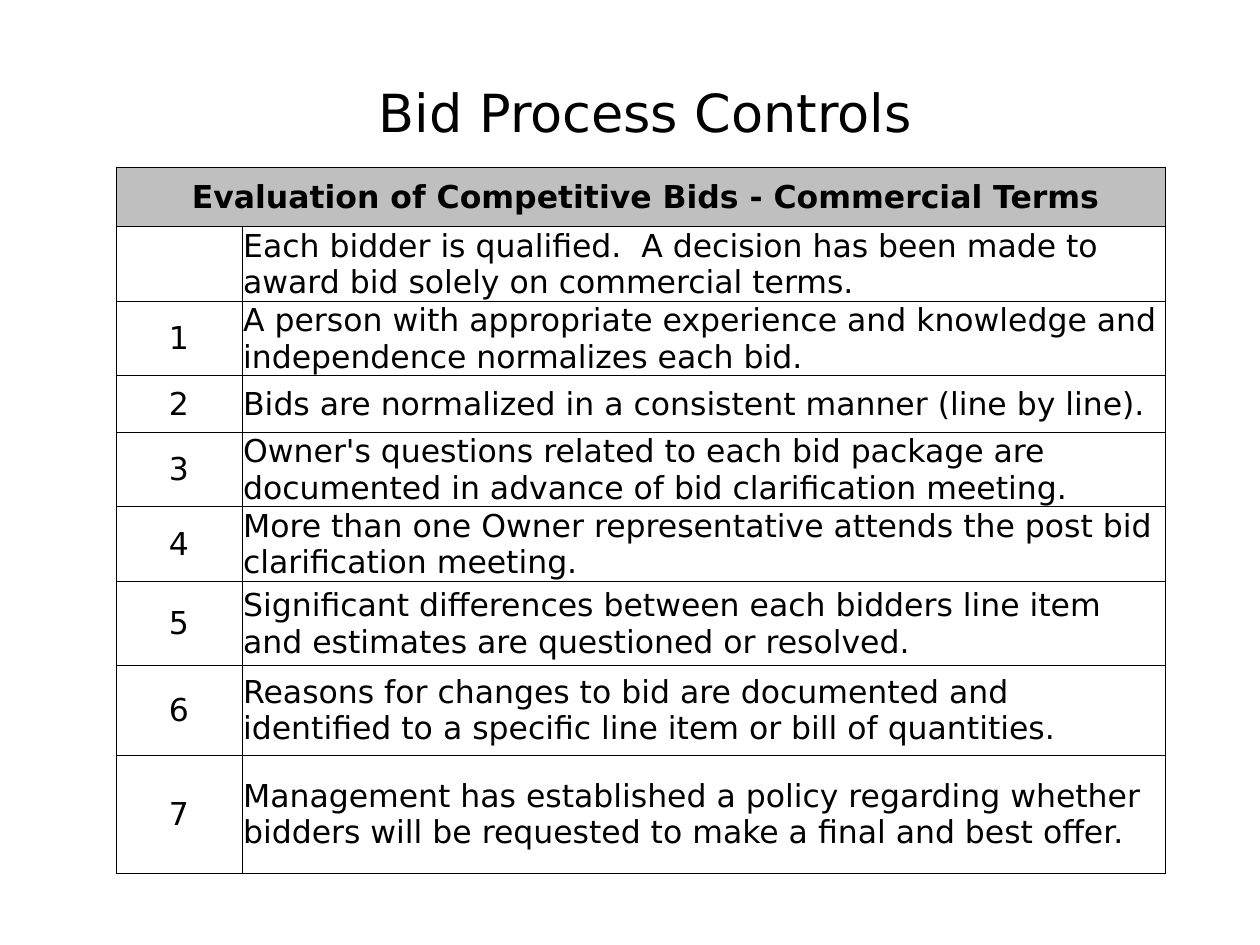
from dataclasses import dataclass

from lxml.etree import SubElement
from pptx import Presentation
from pptx.dml.color import RGBColor
from pptx.enum.text import MSO_ANCHOR, PP_ALIGN
from pptx.oxml.ns import qn
from pptx.util import Inches, Pt


@dataclass(frozen=True)
class Theme:
    font: str = "DejaVu Sans"
    title_size: int = 30
    table_size: int = 18
    border_width: float = 0.5
    ink: str = "000000"
    header_fill: str = "BFBFBF"


theme = Theme()

HEADING = "Evaluation of Competitive Bids - Commercial Terms"
# Number, control and row height in inches
CONTROLS = [
    ("", "Each bidder is qualified.  A decision has been made to award bid solely on commercial terms.", 0.58),
    ("1", "A person with appropriate experience and knowledge and independence normalizes each bid.", 0.58),
    ("2", "Bids are normalized in a consistent manner (line by line).", 0.45),
    ("3", "Owner's questions related to each bid package are documented in advance of bid clarification meeting.", 0.58),
    ("4", "More than one Owner representative attends the post bid clarification meeting.", 0.58),
    ("5", "Significant differences between each bidders line item and estimates are questioned or resolved.", 0.67),
    ("6", "Reasons for changes to bid are documented and identified to a specific line item or bill of quantities.", 0.71),
    ("7", "Management has established a policy regarding whether bidders will be requested to make a final and best offer.", 0.94),
]
HEADING_HEIGHT = 0.47
COLUMN_WIDTHS = [1, 7.33]


def style_paragraph(paragraph, size, align, bold=False):
    paragraph.alignment = align
    paragraph.font.name = theme.font
    paragraph.font.size = Pt(size)
    paragraph.font.bold = bold
    paragraph.font.color.rgb = RGBColor.from_string(theme.ink)


def add_borders(cell):
    properties = cell._tc.get_or_add_tcPr()
    for side in ("a:lnL", "a:lnR", "a:lnT", "a:lnB"):
        line = SubElement(properties, qn(side), w=str(Pt(theme.border_width)))
        fill = SubElement(line, qn("a:solidFill"))
        SubElement(fill, qn("a:srgbClr"), val=theme.ink)


prs = Presentation()
prs.slide_width, prs.slide_height = Inches(10), Inches(7.5)
slide = prs.slides.add_slide(prs.slide_layouts[5])

title = slide.shapes.title
title.left, title.top = Inches(1), Inches(0.5)
title.width, title.height = Inches(8.25), Inches(0.83)
title.text_frame.text = "Bid Process Controls"
title.text_frame.vertical_anchor = MSO_ANCHOR.MIDDLE
title_line = title.text_frame.paragraphs[0]
title_line.line_spacing = 0.9
style_paragraph(title_line, theme.title_size, PP_ALIGN.CENTER)

heights = [HEADING_HEIGHT] + [height for _, _, height in CONTROLS]
controls = slide.shapes.add_table(
    len(heights), len(COLUMN_WIDTHS), Inches(0.92), Inches(1.33),
    Inches(sum(COLUMN_WIDTHS)), Inches(sum(heights)),
).table
controls.first_row = controls.horz_banding = False
for column, width in zip(controls.columns, COLUMN_WIDTHS):
    column.width = Inches(width)
for row, height in zip(controls.rows, heights):
    row.height = Inches(height)

rows = [(HEADING, "")] + [(number, control) for number, control, _ in CONTROLS]
for row_index, texts in enumerate(rows):
    is_heading = row_index == 0
    for column_index, text in enumerate(texts):
        cell = controls.cell(row_index, column_index)
        cell.text = text
        cell.vertical_anchor = MSO_ANCHOR.MIDDLE
        cell.margin_left = cell.margin_right = cell.margin_top = Inches(0.01)
        cell.margin_bottom = 0
        align = PP_ALIGN.CENTER if column_index == 0 else PP_ALIGN.LEFT
        style_paragraph(cell.text_frame.paragraphs[0], theme.table_size, align, is_heading)
        add_borders(cell)
        if is_heading:
            cell.fill.solid()
            cell.fill.fore_color.rgb = RGBColor.from_string(theme.header_fill)
        else:
            cell.fill.background()

heading = controls.cell(0, 0)
heading.merge(controls.cell(0, 1))
heading.margin_left = Inches(0.09)

prs.save("out.pptx")
